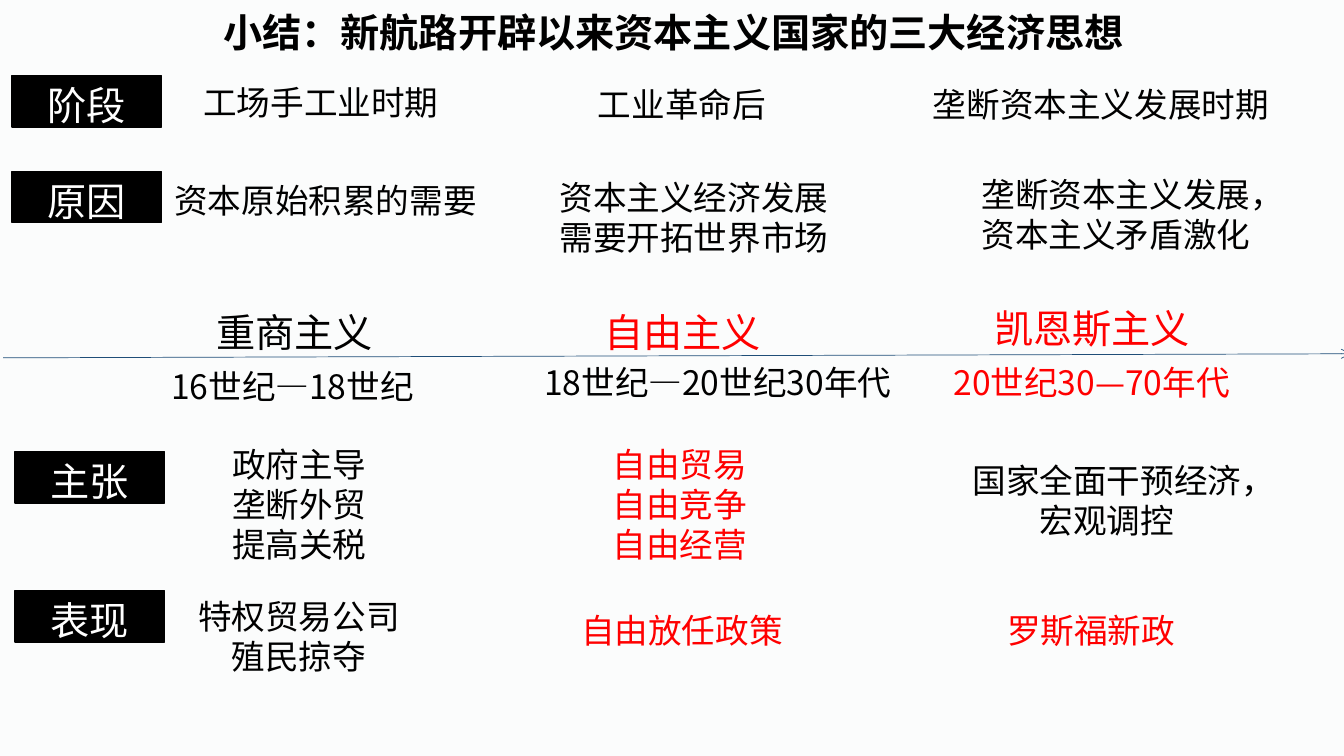
from lxml import etree
from pptx import Presentation
from pptx.dml.color import RGBColor
from pptx.enum.shapes import MSO_CONNECTOR, MSO_SHAPE
from pptx.enum.text import MSO_ANCHOR, MSO_AUTO_SIZE, PP_ALIGN
from pptx.oxml.ns import qn
from pptx.util import Pt

LEFT, CENTER = PP_ALIGN.LEFT, PP_ALIGN.CENTER
TOP, MIDDLE = MSO_ANCHOR.TOP, MSO_ANCHOR.MIDDLE
FIT_SHAPE = MSO_AUTO_SIZE.SHAPE_TO_FIT_TEXT
RECTANGLE, STRAIGHT = MSO_SHAPE.RECTANGLE, MSO_CONNECTOR.STRAIGHT

COLORS = {"background": "FBFCFC", "black": "000000", "white": "FFFFFF",
          "red": "FF0000", "axis": "1F4E78"}
FONT, TITLE_FONT = "Noto Sans CJK SC", "Times New Roman"
BODY_SIZE, HEAD_SIZE = 24, 28

TITLE = "小结：新航路开辟以来资本主义国家的三大经济思想"

# Row labels: text, left, top
LABELS = [("阶段", 8.6, 54), ("原因", 8.6, 122.4),
          ("主张", 10.8, 322.6), ("表现", 10.8, 421.9)]

# Names of the three doctrines: text, left, top, width, colour
DOCTRINES = [("重商主义", 145.4, 214.6, 130.3, "black"),
             ("自由主义", 417.6, 214.6, 139.7, "red"),
             ("凯恩斯主义", 694.8, 211.7, 170.6, "red")]

# Table-like body: text, left, top, width, lines, colour, alignment
DETAILS = [
    # Stage
    ("工场手工业时期", 138.2, 52.6, 188.6, 1, "black", LEFT),
    ("工业革命后", 381.6, 54, 211, 1, "black", CENTER),
    ("垄断资本主义发展时期", 657.4, 54, 257.8, 1, "black", CENTER),
    # Cause
    ("资本原始积累的需要", 117.4, 122.4, 239, 1, "black", LEFT),
    ("资本主义经济发展需要开拓世界市场", 390.2, 120.2, 211, 2, "black", CENTER),
    ("垄断资本主义发展，资本主义矛盾激化", 686.9, 118.1, 220.3, 2, "black", CENTER),
    # Period
    ("16世纪—18世纪", 115.2, 255.6, 194.4, 1, "black", LEFT),
    ("18世纪—20世纪30年代", 381.6, 252.7, 265, 1, "black", LEFT),
    ("20世纪30—70年代", 652.3, 252.7, 254.9, 1, "red", CENTER),
    # Position
    ("政府主导\n垄断外贸\n提高关税", 138.2, 311, 151.2, 3, "black", CENTER),
    ("自由贸易\n自由竞争\n自由经营", 414.7, 311, 141.8, 3, "red", CENTER),
    ("国家全面干预经济，宏观调控", 679, 322.6, 223.2, 2, "black", CENTER),
    # Practice
    ("特权贸易公司\n殖民掠夺", 128.9, 419.8, 169.2, 2, "black", CENTER),
    ("自由放任政策", 402.5, 429.8, 169.2, 1, "red", CENTER),
    ("罗斯福新政", 694.8, 429.8, 169.2, 1, "red", CENTER),
]


def rgb(name):
    return RGBColor.from_string(COLORS[name])


def write_text(shape, text, size, color, align=CENTER, anchor=TOP,
               font=FONT, bold=False):
    frame = shape.text_frame
    frame.text = text
    frame.word_wrap = True
    frame.vertical_anchor = anchor
    # Uneven insets balance the tight line spacing
    frame.margin_top, frame.margin_bottom = Pt(6.3), Pt(0.9)
    for paragraph in frame.paragraphs:
        paragraph.alignment = align
        paragraph.line_spacing = Pt(round(size * 1.19, 1))
        for run in paragraph.runs:
            run.font.size = Pt(size)
            run.font.bold = bold
            run.font.color.rgb = rgb(color)
            run.font.name = font
            east_asian = etree.SubElement(run.font._element, qn("a:ea"))
            east_asian.set("typeface", FONT)


def add_text(slide, text, left, top, width, size, color, lines=1, **style):
    height = lines * size * 1.2 + 7.2
    box = slide.shapes.add_textbox(Pt(left), Pt(top), Pt(width), Pt(height))
    write_text(box, text, size, color, **style)
    box.text_frame.auto_size = FIT_SHAPE


def add_label(slide, text, left, top):
    label = slide.shapes.add_shape(RECTANGLE, Pt(left), Pt(top),
                                   Pt(106.6), Pt(36.7))
    label.shadow.inherit = False
    label.fill.solid()
    label.fill.fore_color.rgb = rgb("black")
    label.line.color.rgb = rgb("black")
    label.line.width = Pt(1)
    write_text(label, text, HEAD_SIZE, "white", anchor=MIDDLE)


def add_time_axis(slide):
    axis = slide.shapes.add_connector(STRAIGHT, Pt(2.2), Pt(255.6),
                                      Pt(964.8), Pt(252.7))
    axis.line.color.rgb = rgb("axis")
    axis.line.width = Pt(0.5)
    etree.SubElement(axis.line._get_or_add_ln(), qn("a:tailEnd"), type="arrow")
    etree.SubElement(axis._element.spPr, qn("a:effectLst"))


def main():
    presentation = Presentation()
    presentation.slide_width, presentation.slide_height = Pt(960), Pt(540)
    slide = presentation.slides.add_slide(presentation.slide_layouts[6])
    slide.background.fill.solid()
    slide.background.fill.fore_color.rgb = rgb("background")

    add_time_axis(slide)
    add_text(slide, TITLE, 2.2, 0, 957.6, HEAD_SIZE, "black",
             font=TITLE_FONT, bold=True)
    for text, left, top in LABELS:
        add_label(slide, text, left, top)
    for text, left, top, width, color in DOCTRINES:
        add_text(slide, text, left, top, width, HEAD_SIZE, color)
    for text, left, top, width, lines, color, align in DETAILS:
        add_text(slide, text, left, top, width, BODY_SIZE, color, lines,
                 align=align)

    presentation.save("out.pptx")


if __name__ == "__main__":
    main()
